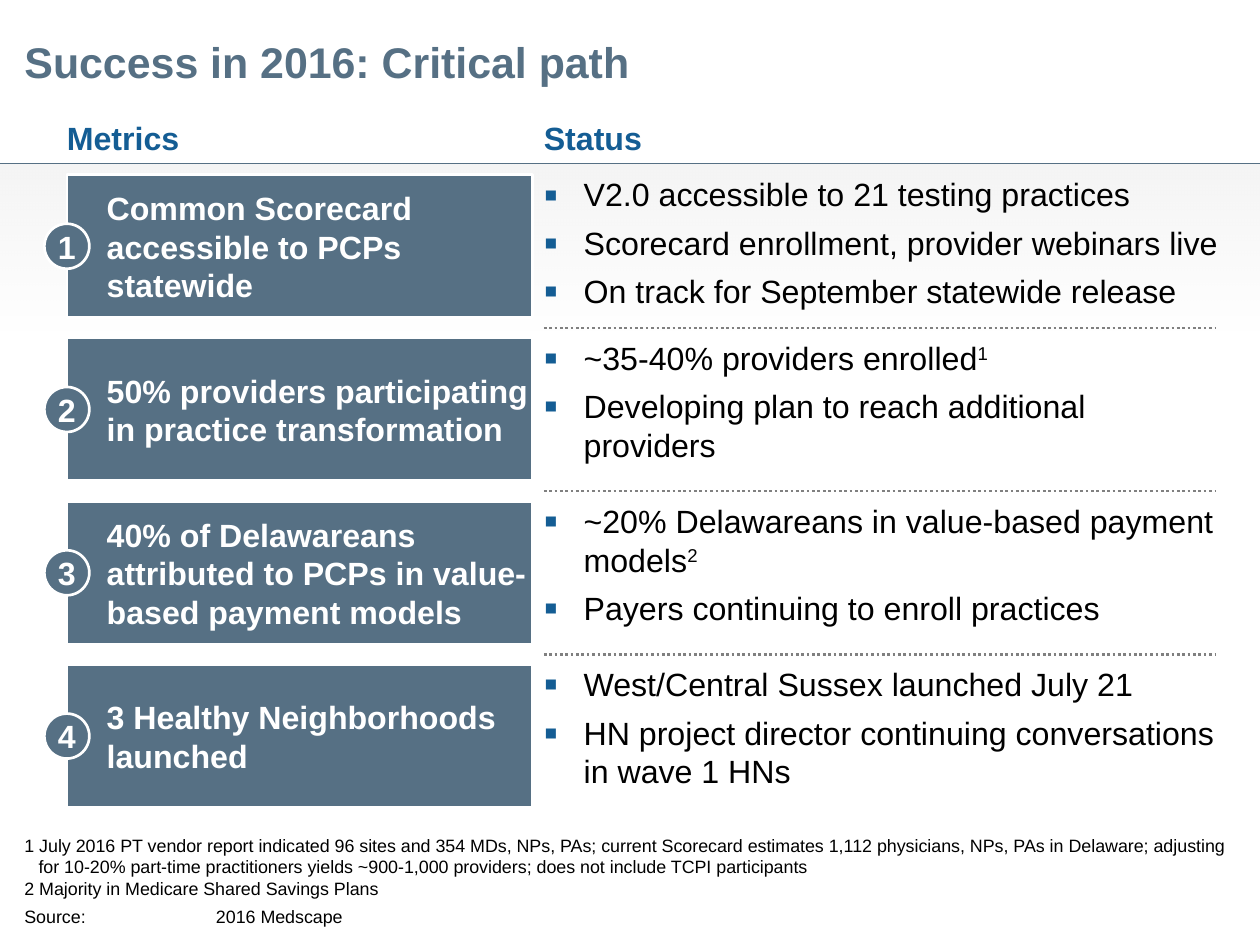
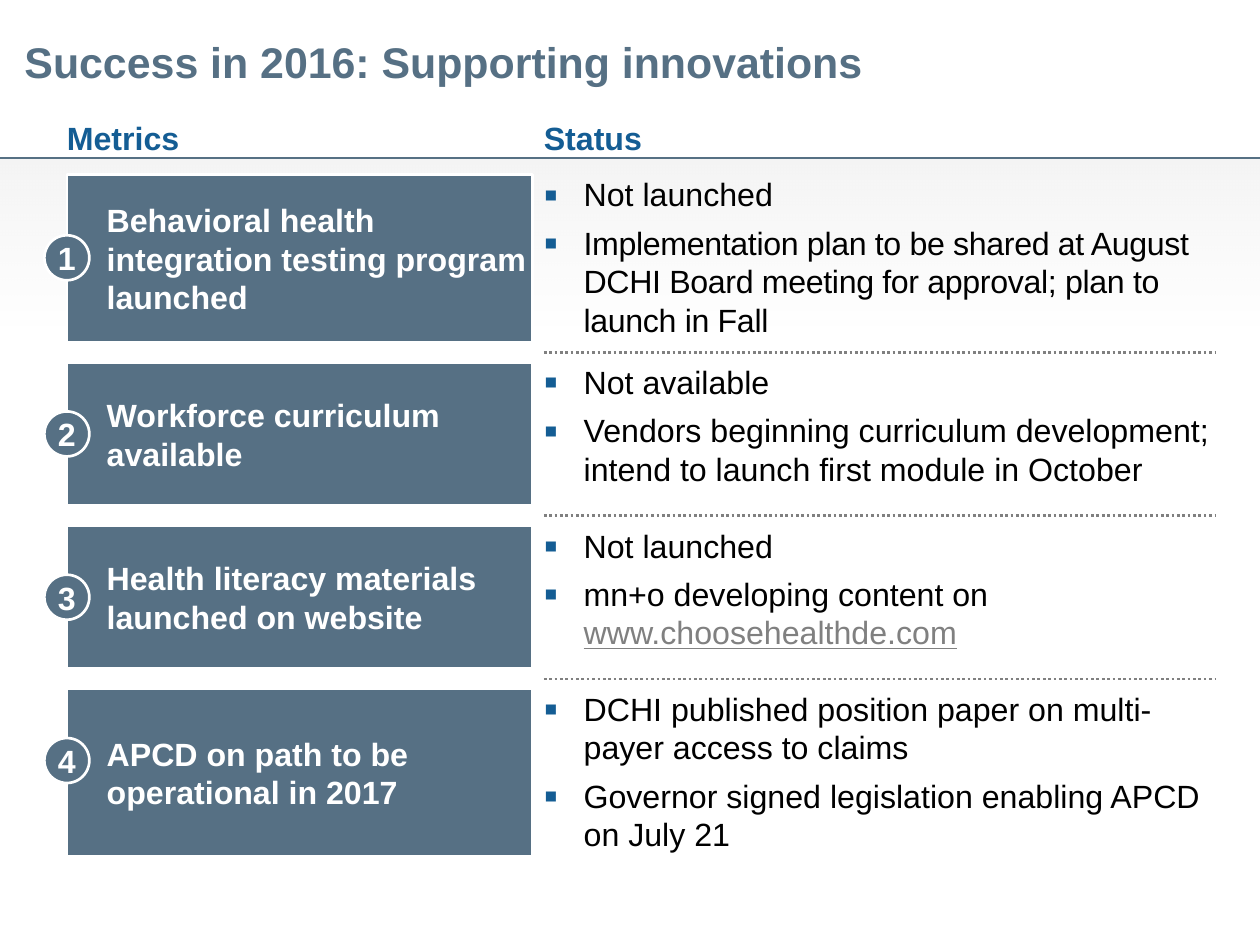
"""Build two slides that pair success metrics with their status."""
from dataclasses import dataclass

from lxml import etree
from pptx import Presentation
from pptx import util as u
from pptx.dml.color import RGBColor
from pptx.enum import dml, shapes, text
from pptx.oxml import ns

SLATE = RGBColor(0x56, 0x70, 0x84)
BLUE = RGBColor(0x14, 0x5D, 0x94)
GREY = RGBColor(0x80, 0x80, 0x80)
PALE = RGBColor(0xF2, 0xF2, 0xF2)
WHITE = RGBColor(0xFF, 0xFF, 0xFF)
BLACK = RGBColor(0, 0, 0)

TITLE = {"size": u.Pt(24), "bold": True, "color": SLATE}
HEADING = {"size": u.Pt(18), "bold": True, "color": BLUE}
LABEL = {"size": u.Pt(18), "bold": True, "color": WHITE}
BODY = {"size": u.Pt(18), "color": BLACK}
NOTE = {"size": u.Pt(10), "color": BLACK}
LINK = {"underline": True, "color": GREY}
RAISED = {"baseline": "30000"}
TIGHT = {"spc": "-20"}

WIDTH, HEIGHT = 9.8, 7.35
MARGIN, FULL_WIDTH = 0.19, 9.43
METRIC_LEFT, METRIC_WIDTH = 0.52, 3.62
STATUS_LEFT, STATUS_WIDTH = 4.23, 5.23
HEADING_TOP, HEADING_HEIGHT = 0.92, 0.3
ROWS_TOP, ROW_GAP = 1.36, 0.16
BADGE = 0.35
INDENT, NOTE_INDENT, SOURCE_TAB = 0.31, 0.11, 1.49
MIDDLE, BOTTOM = text.MSO_ANCHOR.MIDDLE, text.MSO_ANCHOR.BOTTOM


@dataclass
class Row:
    """One metric with its status points."""
    metric: str
    points: list
    height: float = 1.11
    badge_drop: float = 0.38
    status_width: float = STATUS_WIDTH


SLIDES = [
    {
        "title": "Success in 2016: Critical path",
        "band_top": 1.27,
        "rows": [
            Row("Common Scorecard accessible to PCPs statewide",
                ["V2.0 accessible to 21 testing practices",
                 "Scorecard enrollment, provider webinars live",
                 "On track for September statewide release"], status_width=5.38),
            Row("50% providers participating in practice transformation",
                [["~35-40% providers enrolled", ("1", {}, RAISED)],
                 "Developing plan to reach additional providers"]),
            Row("40% of Delawareans attributed to PCPs in value-based payment models",
                [["~20% Delawareans in value-based payment models", ("2", {}, RAISED)],
                 "Payers continuing to enroll practices"]),
            Row("3 Healthy Neighborhoods launched",
                ["West/Central Sussex launched July 21",
                 "HN project director continuing conversations in wave 1 HNs"]),
        ],
        "notes": [
            "1 July 2016 PT vendor report indicated 96 sites and 354 MDs, NPs, PAs; "
            "current Scorecard estimates 1,112 physicians, NPs, PAs in Delaware; "
            "adjusting for 10-20% part-time practitioners yields ~900-1,000 providers; "
            "does not include TCPI participants",
            "2 Majority in Medicare Shared Savings Plans",
        ],
        "source": "Source:\t2016 Medscape",
    },
    {
        "title": "Success in 2016: Supporting innovations",
        "band_top": 1.23,
        "rows": [
            Row("Behavioral health integration testing program launched",
                ["Not launched",
                 [("Implementation plan to be shared at August DCHI Board meeting "
                   "for approval; plan to launch in Fall", {}, TIGHT)]],
                height=1.3, badge_drop=0.47),
            Row("Workforce curriculum available",
                ["Not available",
                 "Vendors beginning curriculum development; "
                 "intend to launch first module in October"]),
            Row("Health literacy materials launched on website",
                ["Not launched",
                 ["mn+o developing content on ", ("www.choosehealthde.com", LINK, {})]]),
            Row("APCD on path to be operational in 2017",
                ["DCHI published position paper on multi-payer access to claims",
                 "Governor signed legislation enabling APCD on July 21"], height=1.3),
        ],
    },
]


def inches(*lengths):
    return [u.Inches(length) for length in lengths]


def child(parent, tag, **attributes):
    return etree.SubElement(parent, ns.qn(tag), attributes)


def write(frame, paragraphs, style, anchor=text.MSO_ANCHOR.TOP,
          align=text.PP_ALIGN.LEFT, indent=0, hanging=0, bullet=False, tab=None):
    settings = {"word_wrap": True, "auto_size": text.MSO_AUTO_SIZE.NONE,
                "vertical_anchor": anchor, "margin_left": 0, "margin_right": 0,
                "margin_top": 0, "margin_bottom": 0}
    for name, value in settings.items():
        setattr(frame, name, value)
    for index, spans in enumerate(paragraphs):
        para = frame.add_paragraph() if index else frame.paragraphs[0]
        properties = para._p.get_or_add_pPr()
        if indent:
            properties.set("marL", str(u.Inches(indent)))
            properties.set("indent", str(-u.Inches(hanging)))
        if bullet:
            child(child(properties, "a:buClr"), "a:srgbClr", val=str(BLUE))
            child(properties, "a:buSzPct", val="125000")
            child(properties, "a:buFont", typeface="Arial")
            child(properties, "a:buChar", char="▪")
        if tab:
            stops = child(properties, "a:tabLst")
            child(stops, "a:tab", pos=str(u.Inches(tab)), algn="l")
        para.alignment = align
        if bullet and index:
            para.space_before = u.Pt(5.4)
        for piece in [spans] if isinstance(spans, str) else spans:
            words, extra, attributes = (piece, {}, {}) if isinstance(piece, str) else piece
            span = para.add_run()
            span.text = words
            for name, value in {"name": "Arial", **style, **extra}.items():
                if name == "color":
                    span.font.color.rgb = value
                else:
                    setattr(span.font, name, value)
            for name, value in attributes.items():
                span._r.get_or_add_rPr().set(name, value)


def add_text(page, place, paragraphs, style, **layout):
    box = page.shapes.add_textbox(*inches(*place))
    write(box.text_frame, paragraphs, style, **layout)


def add_block(page, kind, place, words, **layout):
    block = page.shapes.add_shape(kind, *inches(*place))
    block.shadow.inherit = False
    block.fill.solid()
    block.fill.fore_color.rgb = SLATE
    block.line.color.rgb = WHITE
    block.line.width = u.Pt(1.5)
    write(block.text_frame, [words], LABEL, anchor=MIDDLE, **layout)


def add_rule(page, left, right, top, color, width, dash=None):
    rule = page.shapes.add_connector(
        shapes.MSO_CONNECTOR.STRAIGHT, *inches(left, top, right, top))
    rule.line.color.rgb = color
    rule.line.width = u.Pt(width)
    if dash:
        rule.line.dash_style = dash
    child(rule._element.spPr, "a:effectLst")


def add_band(page, top):
    band = page.shapes.add_shape(
        shapes.MSO_SHAPE.RECTANGLE, *inches(0, top, WIDTH, 1.3))
    band.shadow.inherit = False
    band.line.fill.background()
    band.fill.gradient()
    band.fill.gradient_angle = 270
    for stop, alpha in zip(band.fill.gradient_stops, ("80000", "0")):
        stop.color.rgb = PALE
        child(stop._gs[0], "a:alpha", val=alpha)
    add_rule(page, 0, WIDTH, top, SLATE, 0.75)


def add_row(page, number, row, top):
    add_block(page, shapes.MSO_SHAPE.RECTANGLE,
              (METRIC_LEFT, top, METRIC_WIDTH, row.height), row.metric, indent=INDENT)
    add_block(page, shapes.MSO_SHAPE.OVAL,
              (METRIC_LEFT - BADGE / 2, top + row.badge_drop, BADGE, BADGE),
              str(number), align=text.PP_ALIGN.CENTER)
    add_text(page, (STATUS_LEFT, top, row.status_width, row.height), row.points, BODY,
             indent=INDENT, hanging=INDENT, bullet=True)
    if number > 1:
        add_rule(page, STATUS_LEFT, STATUS_LEFT + STATUS_WIDTH, top - ROW_GAP / 2,
                 GREY, 1.5, dml.MSO_LINE.ROUND_DOT)


def add_slide(deck, content):
    page = deck.slides.add_slide(deck.slide_layouts.get_by_name("Title Only"))
    add_band(page, content["band_top"])
    title = page.shapes.title
    title.left, title.top, title.width, title.height = inches(MARGIN, 0.28, FULL_WIDTH, 0.4)
    write(title.text_frame, [content["title"]], TITLE)
    for heading, left, width in (("Metrics", METRIC_LEFT, METRIC_WIDTH),
                                 ("Status", STATUS_LEFT, STATUS_WIDTH)):
        add_text(page, (left, HEADING_TOP, width, HEADING_HEIGHT), [heading], HEADING,
                 anchor=BOTTOM)
    top = ROWS_TOP
    for number, row in enumerate(content["rows"], 1):
        add_row(page, number, row, top)
        top += row.height + ROW_GAP
    if "notes" in content:
        add_text(page, (MARGIN, 6.49, FULL_WIDTH, 0.5), content["notes"], NOTE,
                 anchor=BOTTOM, indent=NOTE_INDENT, hanging=NOTE_INDENT)
    if "source" in content:
        add_text(page, (MARGIN, 7.04, 6.76, 0.17), [content["source"]], NOTE,
                 anchor=MIDDLE, tab=SOURCE_TAB)


def main():
    deck = Presentation()
    deck.slide_width, deck.slide_height = inches(WIDTH, HEIGHT)
    for content in SLIDES:
        add_slide(deck, content)
    deck.save("out.pptx")


if __name__ == "__main__":
    main()
